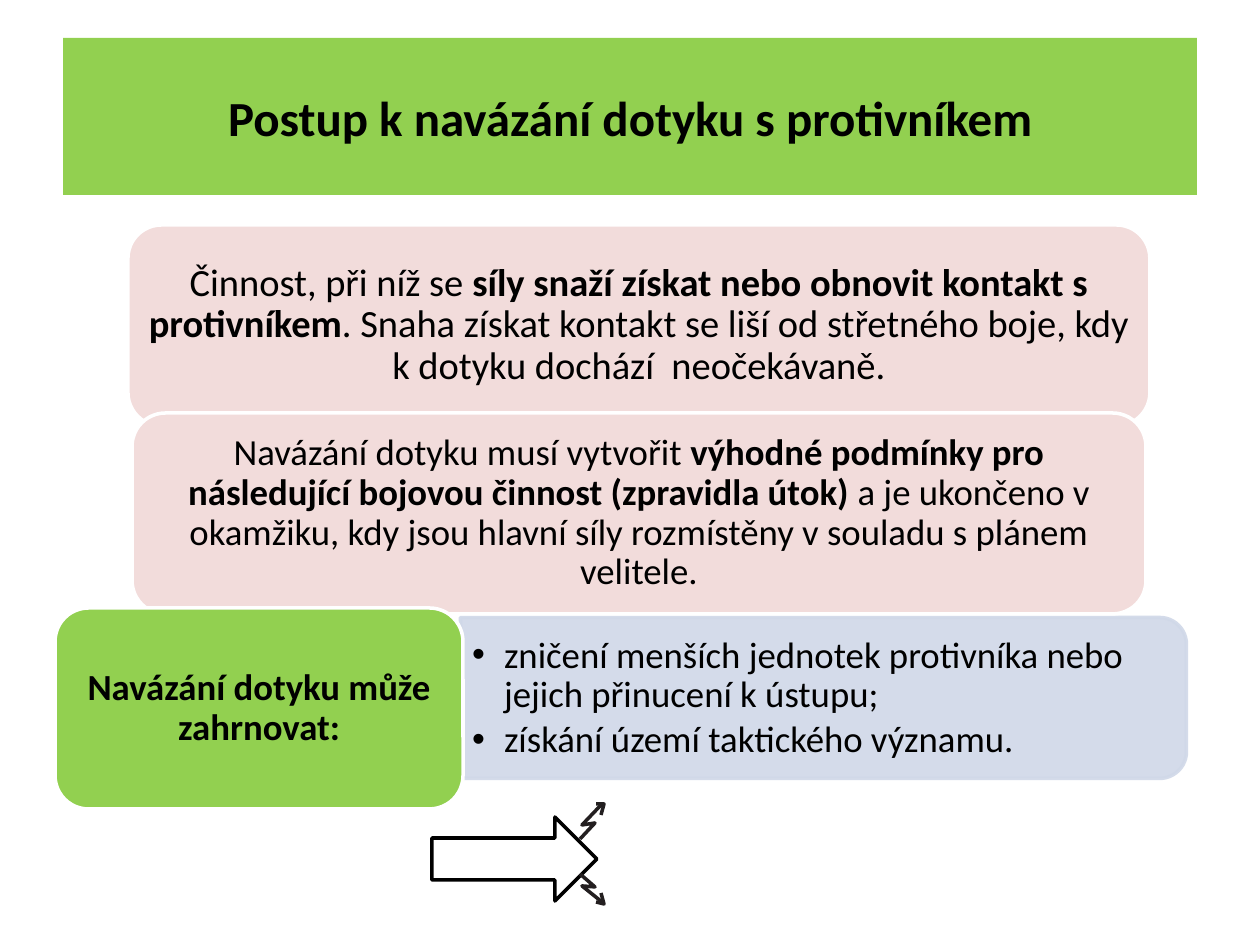
from lxml import etree
from pptx import Presentation
from pptx.dml.color import RGBColor
from pptx.enum.shapes import MSO_SHAPE
from pptx.enum.text import MSO_ANCHOR, MSO_AUTO_SIZE, PP_ALIGN
from pptx.oxml.ns import qn
from pptx.util import Emu, Pt

ROUNDED, HALF_ROUNDED = MSO_SHAPE.ROUNDED_RECTANGLE, MSO_SHAPE.ROUND_2_SAME_RECTANGLE
ARROW = MSO_SHAPE.RIGHT_ARROW
MIDDLE, NO_FIT = MSO_ANCHOR.MIDDLE, MSO_AUTO_SIZE.NONE
CENTER, LEFT = PP_ALIGN.CENTER, PP_ALIGN.LEFT

SCALE = 914400 / 126  # EMU per px
COLORS = {"green": "92D050", "pink": "F2DCDB", "blue": "D0D8E8",
          "white": "FFFFFF", "black": "000000", "bolt": "231F20"}

# Text spans are (text, bold)
TITLE = [("Postup k navázání dotyku s protivníkem", True)]
PANELS = [  # place, fill, text size, spans
    ((128, 225, 1022, 201), "pink", 22, [
        ("Činnost, při níž se ", False),
        ("síly snaží získat nebo obnovit kontakt s protivníkem", True),
        (". Snaha získat kontakt se liší od střetného boje, kdy "
         "k dotyku dochází  neočekávaně.", False)]),
    ((132, 413, 1014, 201), "pink", 21, [
        ("Navázání dotyku musí vytvořit ", False),
        ("výhodné podmínky pro následující bojovou činnost (zpravidla útok) ", True),
        ("a je ukončeno v okamžiku, kdy jsou hlavní síly rozmístěny "
         "v souladu s plánem velitele.", False)]),
    ((55, 608, 408, 201), "green", 21, [("Navázání dotyku může zahrnovat:", True)]),
]
GOALS = ["zničení menších jednotek protivníka nebo jejich přinucení k ústupu;",
         "získání území taktického významu."]
BOLTS = [  # zigzag and tip of each bolt
    [(580, 874), (595, 887), (582, 886), (602, 902)],
    [(596, 902), (604, 904), (601, 893)],
    [(580, 839), (595, 823), (582, 825), (602, 804)],
    [(596, 804), (604, 804), (601, 815)],
]


def px(value):
    return Emu(round(value * SCALE))


def color(name):
    return RGBColor.from_string(COLORS[name])


def move(shape, place):
    shape.left, shape.top, shape.width, shape.height = map(px, place)


def paint(shape, fill, line):
    shape.shadow.inherit = False
    if fill:
        shape.fill.solid()
        shape.fill.fore_color.rgb = color(fill)
    else:
        shape.fill.background()
    shape.line.color.rgb = color(line)
    shape.line.width = Pt(2)


def set_frame(shape, inset):
    frame = shape.text_frame
    frame.word_wrap, frame.auto_size = True, NO_FIT
    frame.vertical_anchor = MIDDLE
    frame.margin_left = frame.margin_right = px(11)
    frame.margin_top = frame.margin_bottom = px(inset)
    return frame


def write(para, spans, size, align=CENTER, spacing=0.9):
    para.alignment, para.line_spacing = align, spacing
    para.space_before = Pt(0)
    for text, bold in spans:
        span = para.add_run()
        span.text = text
        font = span.font
        font.name, font.size, font.bold = "Calibri", Pt(size), bold
        font.color.rgb = color("black")


def add_panel(page, place, fill, size, spans):
    box = page.shapes.add_shape(ROUNDED, *map(px, place))
    paint(box, fill, "white")
    write(set_frame(box, 5).paragraphs[0], spans, size)


def add_goals_panel(page):
    panel = page.shapes.add_shape(HALF_ROUNDED, *map(px, (743, 335, 161, 726)))
    panel.rotation = 90
    paint(panel, "blue", "blue")
    for tint in panel.element.spPr.iter(qn("a:srgbClr")):
        etree.SubElement(tint, qn("a:alpha"), val="90000")


def fill_goals(page):
    body = page.placeholders[1]
    move(body, (461, 626, 718, 145))
    page.shapes._spTree.append(body.element)  # in front of its panel
    frame = set_frame(body, 5)
    for index, goal in enumerate(GOALS):
        para = frame.add_paragraph() if index else frame.paragraphs[0]
        write(para, [(goal, False)], 21, LEFT)
        para.space_after = Pt(3)
        props = para._p.get_or_add_pPr()
        props.set("marL", str(px(32)))
        props.set("indent", str(-px(32)))


def add_bolt(page, points):
    builder = page.shapes.build_freeform(*points[0], scale=SCALE)
    builder.add_line_segments(points[1:], close=False)
    paint(builder.convert_to_shape(), None, "bolt")


def main():
    deck = Presentation()
    deck.slide_width, deck.slide_height = px(1260), px(945)
    page = deck.slides.add_slide(deck.slide_layouts[1])

    title = page.shapes.title
    move(title, (63, 38, 1134, 157))
    title.fill.solid()
    title.fill.fore_color.rgb = color("green")
    write(set_frame(title, 6).paragraphs[0], TITLE, 28, spacing=1.0)

    add_goals_panel(page)
    for panel in PANELS:
        add_panel(page, *panel)
    fill_goals(page)

    arrow = page.shapes.add_shape(ARROW, *map(px, (432, 817, 165, 84)))
    paint(arrow, None, "black")
    for points in BOLTS:
        add_bolt(page, points)

    deck.save("out.pptx")


if __name__ == "__main__":
    main()
